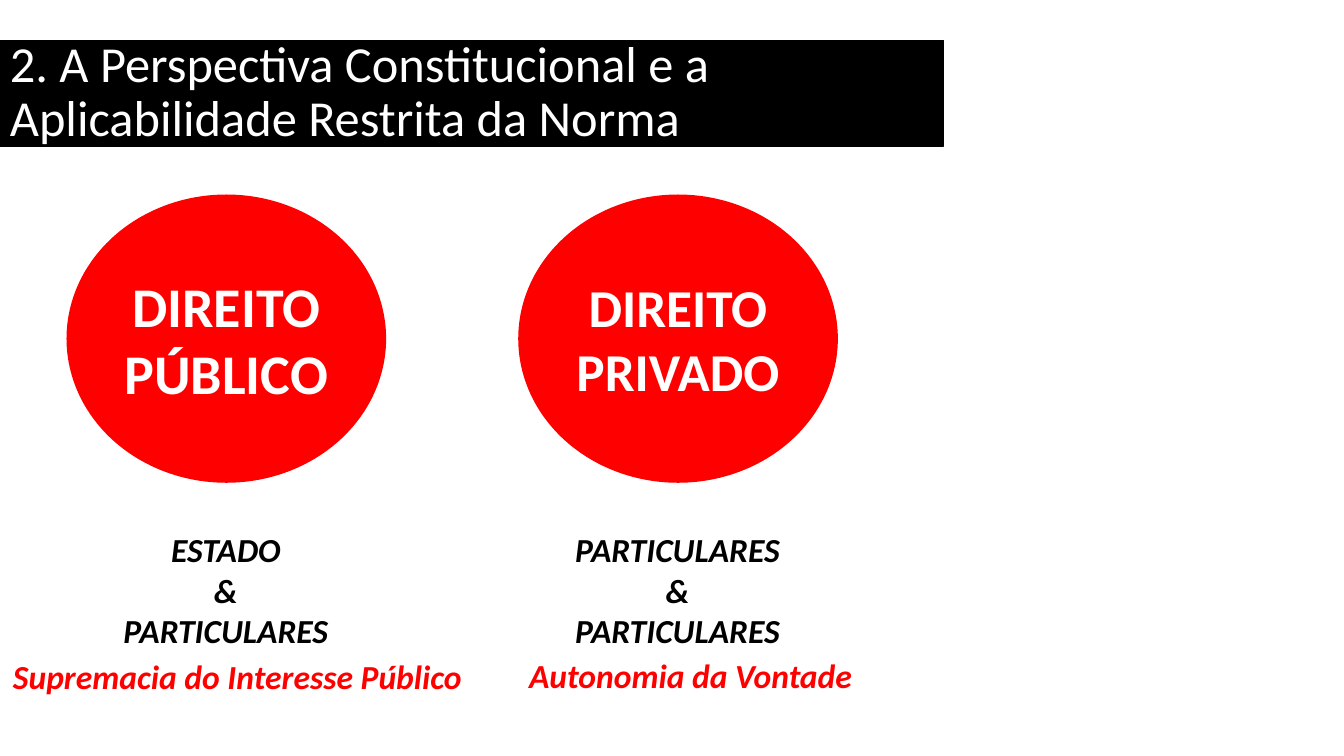
from pptx import Presentation
from pptx.dml.color import RGBColor
from pptx.enum import shapes, text
from pptx.util import Inches, Pt

BLACK = RGBColor(0x00, 0x00, 0x00)
WHITE = RGBColor(0xFF, 0xFF, 0xFF)
RED = RGBColor(0xFF, 0x00, 0x00)
FONT = "Calibri"


def write_lines(shape, lines, size, color, bold=True, italic=False,
                align=text.PP_ALIGN.CENTER, spacing=None):
    """Write one paragraph per line, all in the same style."""
    frame = shape.text_frame
    for index, line in enumerate(lines):
        paragraph = frame.paragraphs[0] if index == 0 else frame.add_paragraph()
        paragraph.alignment = align
        if spacing:
            paragraph.line_spacing = spacing
        run = paragraph.add_run()
        run.text = line
        run.font.name = FONT
        run.font.size = Pt(size)
        run.font.bold = bold
        run.font.italic = italic
        run.font.color.rgb = color


def add_filled_shape(slide, kind, left, top, width, height, fill):
    shape = slide.shapes.add_shape(
        kind, Inches(left), Inches(top), Inches(width), Inches(height))
    shape.shadow.inherit = False
    shape.fill.solid()
    shape.fill.fore_color.rgb = fill
    shape.line.fill.background()
    shape.text_frame.word_wrap = True
    shape.text_frame.vertical_anchor = text.MSO_ANCHOR.MIDDLE
    return shape


def add_title(slide, title):
    bar = add_filled_shape(slide, shapes.MSO_SHAPE.RECTANGLE, 0, 0.4, 9.36, 1.05, BLACK)
    bar.line.color.rgb = BLACK
    bar.line.width = Pt(1)
    write_lines(bar, [title], 36, WHITE, bold=False,
                align=text.PP_ALIGN.LEFT, spacing=0.9)


def add_circle(slide, left, lines, size):
    circle = add_filled_shape(slide, shapes.MSO_SHAPE.OVAL, left, 1.93, 3.17, 2.86, RED)
    write_lines(circle, lines, size, WHITE)


def add_parties(slide, left, width, lines):
    box = slide.shapes.add_textbox(Inches(left), Inches(5), Inches(width), Inches(1.7))
    box.text_frame.word_wrap = True
    box.text_frame.vertical_anchor = text.MSO_ANCHOR.MIDDLE
    write_lines(box, lines, 24, BLACK, italic=True)


def add_principle(slide, left, top, width, principle):
    box = slide.shapes.add_textbox(Inches(left), Inches(top), Inches(width), Inches(0.5))
    box.text_frame.word_wrap = False
    box.text_frame.auto_size = text.MSO_AUTO_SIZE.SHAPE_TO_FIT_TEXT
    write_lines(box, [principle], 24, RED, italic=True, align=text.PP_ALIGN.LEFT)


def main():
    presentation = Presentation()
    presentation.slide_width = Inches(13.33)
    presentation.slide_height = Inches(7.5)
    slide = presentation.slides.add_slide(presentation.slide_layouts[6])

    add_title(slide, "2. A Perspectiva Constitucional e a Aplicabilidade Restrita da Norma")

    # Public law
    add_circle(slide, 0.66, ["DIREITO", "PÚBLICO"], 40)
    add_parties(slide, 0.4, 3.68, ["ESTADO", "&", "PARTICULARES"])
    add_principle(slide, 0.03, 6.46, 4.69, "Supremacia do Interesse Público")

    # Private law
    add_circle(slide, 5.14, ["DIREITO", "PRIVADO"], 38)
    add_parties(slide, 4.91, 3.62, ["PARTICULARES", "&", "PARTICULARES"])
    add_principle(slide, 5.15, 6.45, 3.43, "Autonomia da Vontade")

    presentation.save("out.pptx")


if __name__ == "__main__":
    main()
